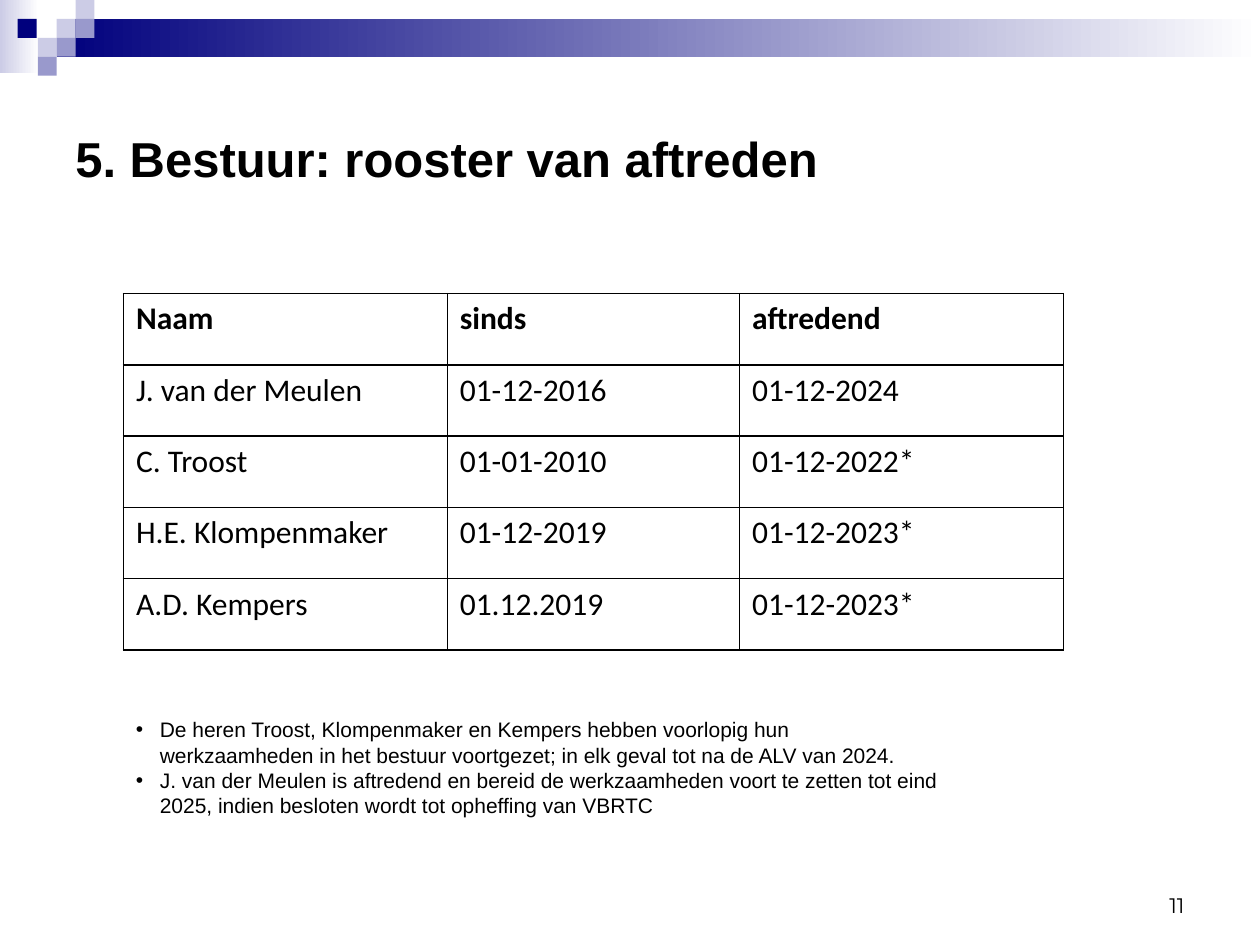
"""Builds the slide with the board's retirement schedule."""
from dataclasses import dataclass

from lxml import etree
from pptx import Presentation
from pptx.dml.color import RGBColor
from pptx.enum.shapes import MSO_SHAPE
from pptx.enum.text import MSO_ANCHOR, PP_ALIGN
from pptx.oxml.ns import qn
from pptx.util import Inches, Pt

RECT = MSO_SHAPE.RECTANGLE
MIDDLE, BOTTOM = MSO_ANCHOR.MIDDLE, MSO_ANCHOR.BOTTOM
LEFT, RIGHT = PP_ALIGN.LEFT, PP_ALIGN.RIGHT


@dataclass(frozen=True)
class Theme:
    navy: str = "00007D"
    violet: str = "9999CC"
    lilac: str = "CCCCE6"
    white: str = "FFFFFF"
    black: str = "000000"
    heading: str = "Arial"
    table: str = "Calibri"
    number: str = "Montserrat"
    title_size: int = 28
    table_size: int = 18
    small_size: int = 12


theme = Theme()


def style(p, font, size, bold=False, align=LEFT):
    p.alignment = align
    for r in p.runs:
        r.font.name, r.font.size, r.font.bold = font, Pt(size), bold
        r.font.color.rgb = RGBColor.from_string(theme.black)


def add_rect(s, left, top, width, height, *colors):
    sp = s.shapes.add_shape(RECT, Inches(left), Inches(top), Inches(width), Inches(height))
    sp.shadow.inherit = False
    sp.line.fill.background()
    if len(colors) == 1:
        sp.fill.solid()
        sp.fill.fore_color.rgb = RGBColor.from_string(colors[0])
    else:
        sp.fill.gradient()
        sp.fill.gradient_angle = 0
        for stop, color in zip(sp.fill.gradient_stops, colors):
            stop.color.rgb = RGBColor.from_string(color)


prs = Presentation()
prs.slide_width, prs.slide_height = Inches(10), Inches(7.5)
s = prs.slides.add_slide(prs.slide_layouts[6])

add_rect(s, 0, 0, 0.31, 0.58, theme.lilac, theme.white)
add_rect(s, 0.45, 0.15, 9.55, 0.3, theme.navy, theme.white)
SQUARE = 0.15
squares = [
    (0.45, 0.15, theme.lilac),
    (0.6, 0, theme.lilac),
    (0.6, 0.15, theme.violet),
    (0.3, 0.3, theme.lilac),
    (0.14, 0.15, theme.navy),
    (0.45, 0.3, theme.violet),
    (0.3, 0.45, theme.violet),
]
for left, top, color in squares:
    add_rect(s, left, top, SQUARE, SQUARE, color)

labels = [
    ("11", (7.17, 6.83, 2.33, 0.5), BOTTOM, theme.number, theme.small_size, False, RIGHT),
    ("5. Bestuur: rooster van aftreden", (0.5, 0.5, 9, 1.5), MIDDLE,
     theme.heading, theme.title_size, True, LEFT),
]
for text, box, anchor, font, size, bold, align in labels:
    tf = s.shapes.add_textbox(*map(Inches, box)).text_frame
    tf.word_wrap, tf.vertical_anchor = True, anchor
    tf.text = text
    style(tf.paragraphs[0], font, size, bold, align)

rows = [
    ("Naam", "sinds", "aftredend"),
    ("J. van der Meulen", "01-12-2016", "01-12-2024"),
    ("C. Troost", "01-01-2010", "01-12-2022*"),
    ("H.E. Klompenmaker", "01-12-2019", "01-12-2023*"),
    ("A.D. Kempers", "01.12.2019", "01-12-2023*"),
]
table = s.shapes.add_table(
    len(rows), len(rows[0]), Inches(0.98), Inches(2.33), Inches(7.46), Inches(2.83)).table
table.first_row = table.horz_banding = False
for column, width in zip(table.columns, (2.57, 2.32, 2.57)):
    column.width = Inches(width)
for i, row in enumerate(rows):
    for j, text in enumerate(row):
        cell = table.cell(i, j)
        cell.text = text
        style(cell.text_frame.paragraphs[0], theme.table, theme.table_size, i == 0)
        tcPr = cell._tc.get_or_add_tcPr()
        for side in ("a:lnL", "a:lnR", "a:lnT", "a:lnB"):
            ln = etree.SubElement(tcPr, qn(side), w=str(Pt(1)))
            fill = etree.SubElement(ln, qn("a:solidFill"))
            etree.SubElement(fill, qn("a:srgbClr"), val=theme.black)
        cell.fill.solid()
        cell.fill.fore_color.rgb = RGBColor.from_string(theme.white)

notes = [
    "De heren Troost, Klompenmaker en Kempers hebben voorlopig hun werkzaamheden "
    "in het bestuur voortgezet; in elk geval tot na de ALV van 2024.",
    "J. van der Meulen is aftredend en bereid de werkzaamheden voort te zetten "
    "tot eind 2025, indien besloten wordt tot opheffing van VBRTC",
]
tf = s.shapes.add_textbox(Inches(0.98), Inches(5.64), Inches(6.61), Inches(0.91)).text_frame
tf.word_wrap = True
tf.text = "\n".join(notes)
for p in tf.paragraphs:
    style(p, theme.heading, theme.small_size)
    pPr = p._p.get_or_add_pPr()
    pPr.set("marL", str(Inches(0.19)))
    pPr.set("indent", str(-Inches(0.19)))
    etree.SubElement(pPr, qn("a:buFont"), typeface=theme.heading)
    etree.SubElement(pPr, qn("a:buChar"), char="•")

prs.save("out.pptx")
